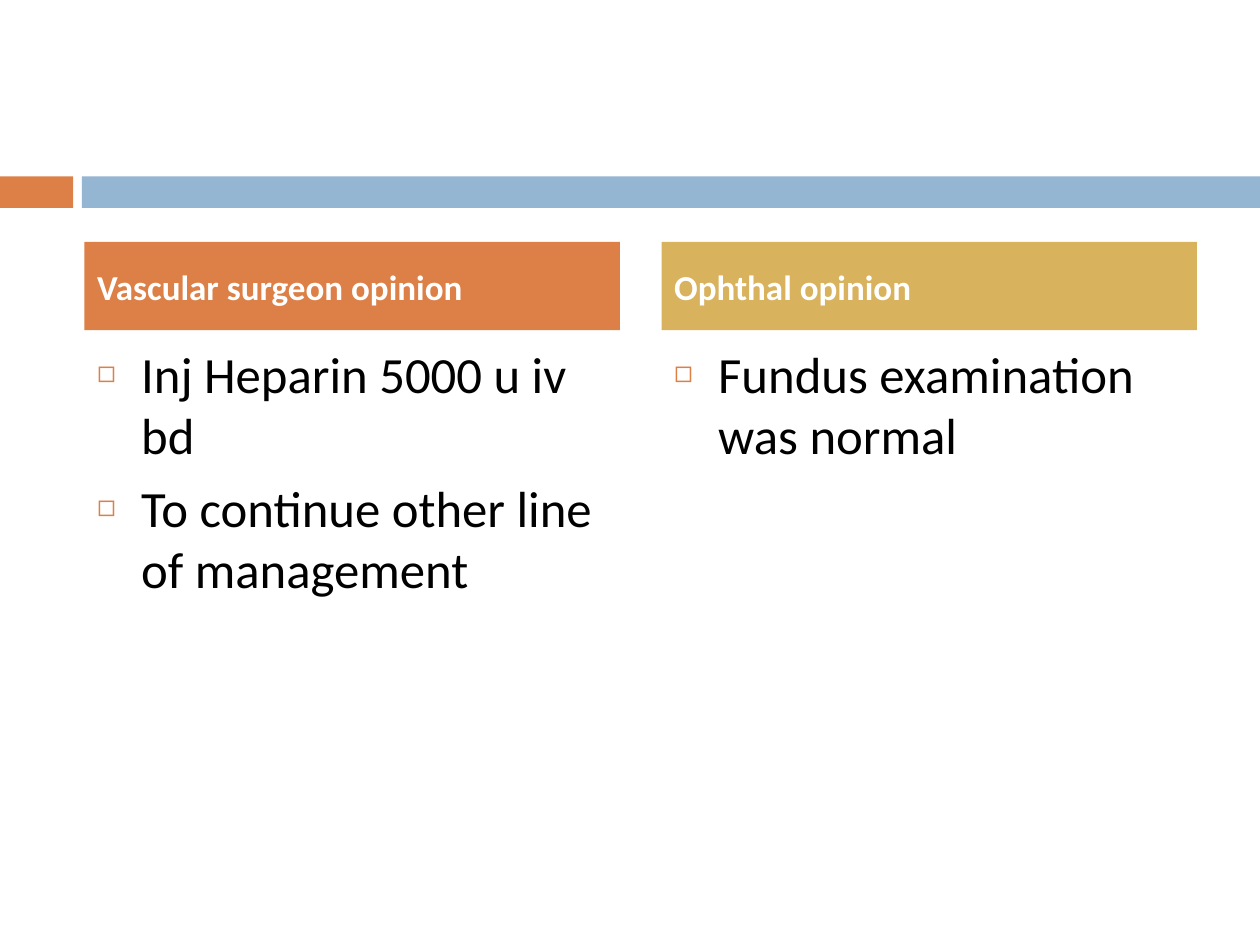
from lxml import etree
from pptx import Presentation
from pptx import util as u
from pptx.dml.color import RGBColor
from pptx.enum import shapes, text
from pptx.oxml import ns

ORANGE, BLUE, GOLD = "DD8047", "94B6D2", "D8B25C"
WHITE, BLACK = "FFFFFF", "000000"


def color(value):
    return RGBColor.from_string(value)


class OpinionSlide:
    font = "Calibri"
    space_before = 7
    indent = 0.35

    def __init__(self, presentation):
        # Comparison layout: two headings with a list under each
        self.slide = presentation.slides.add_slide(presentation.slide_layouts[4])
        title = self.slide.shapes.title
        title.element.getparent().remove(title.element)

    def bar(self, left, top, width, height, fill):
        shape = self.slide.shapes.add_shape(
            shapes.MSO_SHAPE.RECTANGLE,
            u.Inches(left), u.Inches(top), u.Inches(width), u.Inches(height))
        shape.shadow.inherit = False
        shape.fill.solid()
        shape.fill.fore_color.rgb = color(fill)
        shape.line.fill.background()

    def place(self, index, box, anchor):
        shape = self.slide.placeholders[index]
        shape.left, shape.top, shape.width, shape.height = map(u.Inches, box)
        frame = shape.text_frame
        frame.word_wrap = True
        frame.auto_size = text.MSO_AUTO_SIZE.NONE
        frame.vertical_anchor = anchor
        return shape

    def add_words(self, paragraph, words, size, fill, bold=False):
        paragraph.space_before = u.Pt(self.space_before)
        run = paragraph.add_run()
        run.text = words
        run.font.name = self.font
        run.font.size = u.Pt(size)
        run.font.bold = bold
        run.font.color.rgb = color(fill)

    def heading(self, index, box, words, fill):
        shape = self.place(index, box, text.MSO_ANCHOR.MIDDLE)
        shape.fill.solid()
        shape.fill.fore_color.rgb = color(fill)
        self.add_words(shape.text_frame.paragraphs[0], words, 20, WHITE, bold=True)

    def bullet(self, paragraph):
        properties = paragraph._p.get_or_add_pPr()
        properties.set("marL", str(u.Inches(self.indent)))
        properties.set("indent", str(-u.Inches(self.indent)))
        bullet_color = etree.SubElement(properties, ns.qn("a:buClr"))
        etree.SubElement(bullet_color, ns.qn("a:srgbClr"), val=ORANGE)
        etree.SubElement(properties, ns.qn("a:buSzPct"), val="60000")
        etree.SubElement(properties, ns.qn("a:buChar"), char="◻")

    def bullets(self, index, box, items):
        frame = self.place(index, box, text.MSO_ANCHOR.TOP).text_frame
        for number, item in enumerate(items):
            paragraph = frame.add_paragraph() if number else frame.paragraphs[0]
            self.add_words(paragraph, item, 29, BLACK)
            self.bullet(paragraph)


def main():
    presentation = Presentation()
    presentation.slide_width = u.Inches(10)
    presentation.slide_height = u.Inches(7.5)
    page = OpinionSlide(presentation)

    # Band across the slide
    page.bar(0, 1.4, 0.58, 0.25, ORANGE)
    page.bar(0.65, 1.4, 9.35, 0.25, BLUE)

    # One column per opinion
    columns = [
        (0.67, ORANGE, "Vascular surgeon opinion",
         ["Inj Heparin 5000 u iv bd", "To continue other line of management"]),
        (5.25, GOLD, "Ophthal opinion", ["Fundus examination was normal"]),
    ]
    for number, (left, fill, heading, items) in enumerate(columns):
        page.heading(2 * number + 1, (left, 1.92, 4.25, 0.7), heading, fill)
        page.bullets(2 * number + 2, (left, 2.67, 4.25, 3.92), items)

    presentation.save("out.pptx")


if __name__ == "__main__":
    main()
